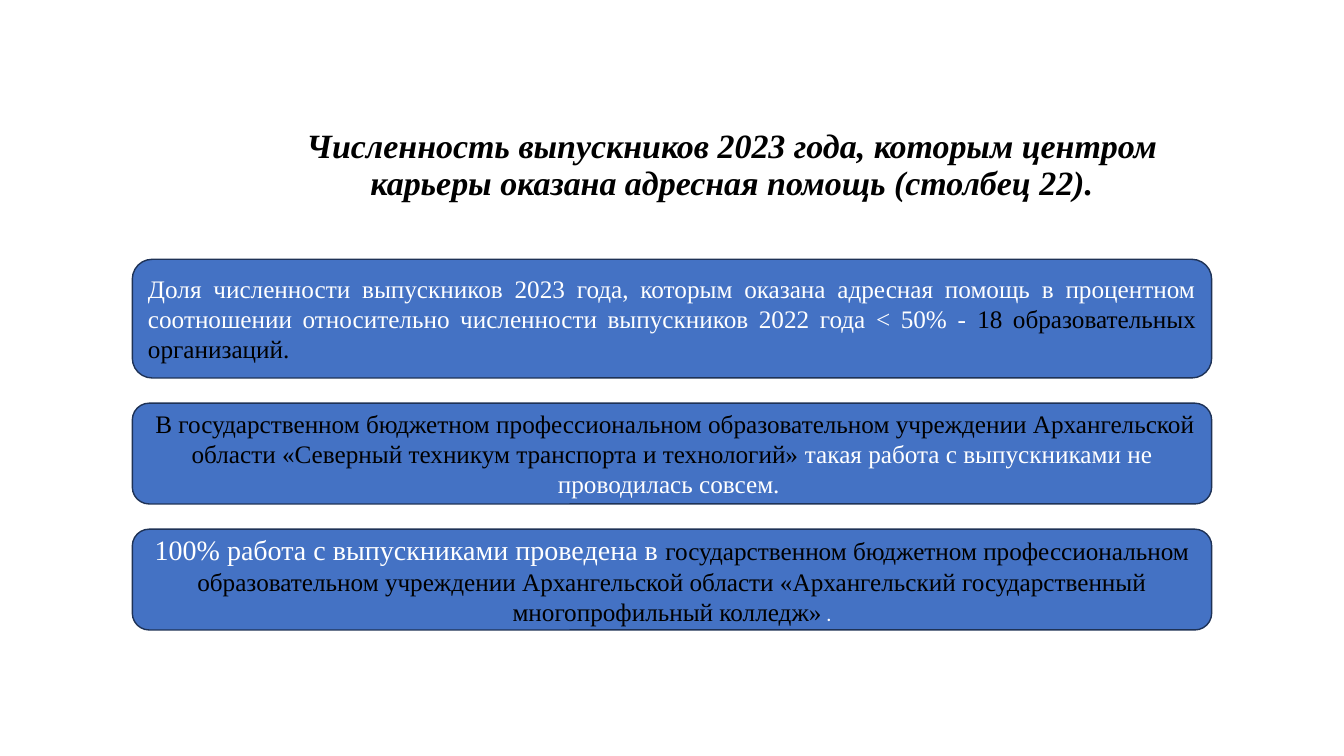
from dataclasses import dataclass

from pptx import Presentation
from pptx.dml.color import RGBColor
from pptx.enum.shapes import MSO_SHAPE
from pptx.enum.text import MSO_ANCHOR, PP_ALIGN
from pptx.util import Pt

ROUND = MSO_SHAPE.ROUNDED_RECTANGLE
MIDDLE = MSO_ANCHOR.MIDDLE
CENTER = PP_ALIGN.CENTER
JUSTIFY = PP_ALIGN.JUSTIFY
SCALE = 9525


@dataclass(frozen=True)
class Theme:
    """Colours, fonts and type sizes of the slide."""
    fill: str = "4472C4"
    edge: str = "1E3256"
    dark: str = "000000"
    light: str = "FFFFFF"
    serif: str = "Times New Roman"
    sans: str = "Lato"
    head: float = 24.3
    lead: int = 20
    body: int = 18
    small: int = 14


class Deck:
    """Draws elements on the current slide in one style."""

    def __init__(self, theme, width, height):
        """Open a deck with one blank slide."""
        self.theme = theme
        self.file = Presentation()
        self.file.slide_width = width * SCALE
        self.file.slide_height = height * SCALE
        self.slide = self.file.slides.add_slide(self.file.slide_layouts[6])

    def style(self, run, size, color, face=None):
        """Set the font of a run."""
        font = run.font
        font.name = face or self.theme.serif
        font.size = Pt(size)
        font.color.rgb = RGBColor.from_string(color)

    def title(self, text, *area):
        """Add the slide heading."""
        box = self.slide.shapes.add_textbox(*(n * SCALE for n in area))
        frame = box.text_frame
        frame.text = text
        frame.word_wrap = True
        frame.vertical_anchor = MIDDLE
        frame.margin_bottom = 17 * SCALE
        para = frame.paragraphs[0]
        para.alignment = CENTER
        para.line_spacing = 0.9
        run = para.runs[0]
        self.style(run, self.theme.head, self.theme.dark)
        run.font.bold = run.font.italic = True

    def card(self, parts, align, *area):
        """Add a rounded card holding styled parts of one paragraph."""
        shape = self.slide.shapes.add_shape(ROUND, *(n * SCALE for n in area))
        shape.shadow.inherit = False
        shape.fill.solid()
        shape.fill.fore_color.rgb = RGBColor.from_string(self.theme.fill)
        shape.line.color.rgb = RGBColor.from_string(self.theme.edge)
        shape.line.width = Pt(1)
        frame = shape.text_frame
        frame.word_wrap = True
        frame.vertical_anchor = MIDDLE
        para = frame.paragraphs[0]
        para.alignment = align
        for text, *look in parts:
            run = para.add_run()
            run.text = text
            self.style(run, *look)


def main():
    """Build and save the slide."""
    theme = Theme()
    deck = Deck(theme, 1280, 720)
    deck.title(
        "Численность выпускников 2023 года, которым центром карьеры "
        "оказана адресная помощь (столбец 22).", 223, 105, 948, 119)
    light = theme.body, theme.light
    dark = theme.body, theme.dark
    cards = [
        (113, JUSTIFY, [
            ("Доля численности выпускников 2023 года, которым оказана "
             "адресная помощь в процентном соотношении относительно "
             "численности выпускников 2022 года < 50% - ", *light),
            ("18 образовательных организаций.", *dark)]),
        (96, CENTER, [
            (" В государственном бюджетном профессиональном "
             "образовательном учреждении Архангельской области "
             "«Северный техникум транспорта и технологий»", *dark),
            (" такая работа с выпускниками не проводилась совсем. ",
             *light)]),
        (96, CENTER, [
            ("100% работа с выпускниками проведена в ",
             theme.lead, theme.light),
            ("государственном бюджетном профессиональном "
             "образовательном учреждении Архангельской области "
             "«Архангельский государственный многопрофильный колледж»",
             *dark),
            (" .", theme.small, theme.light, theme.sans)]),
    ]
    top, gap = 247, 24
    for height, align, parts in cards:
        deck.card(parts, align, 126, top, 1028, height)
        top += height + gap
    deck.file.save("out.pptx")


if __name__ == "__main__":
    main()
